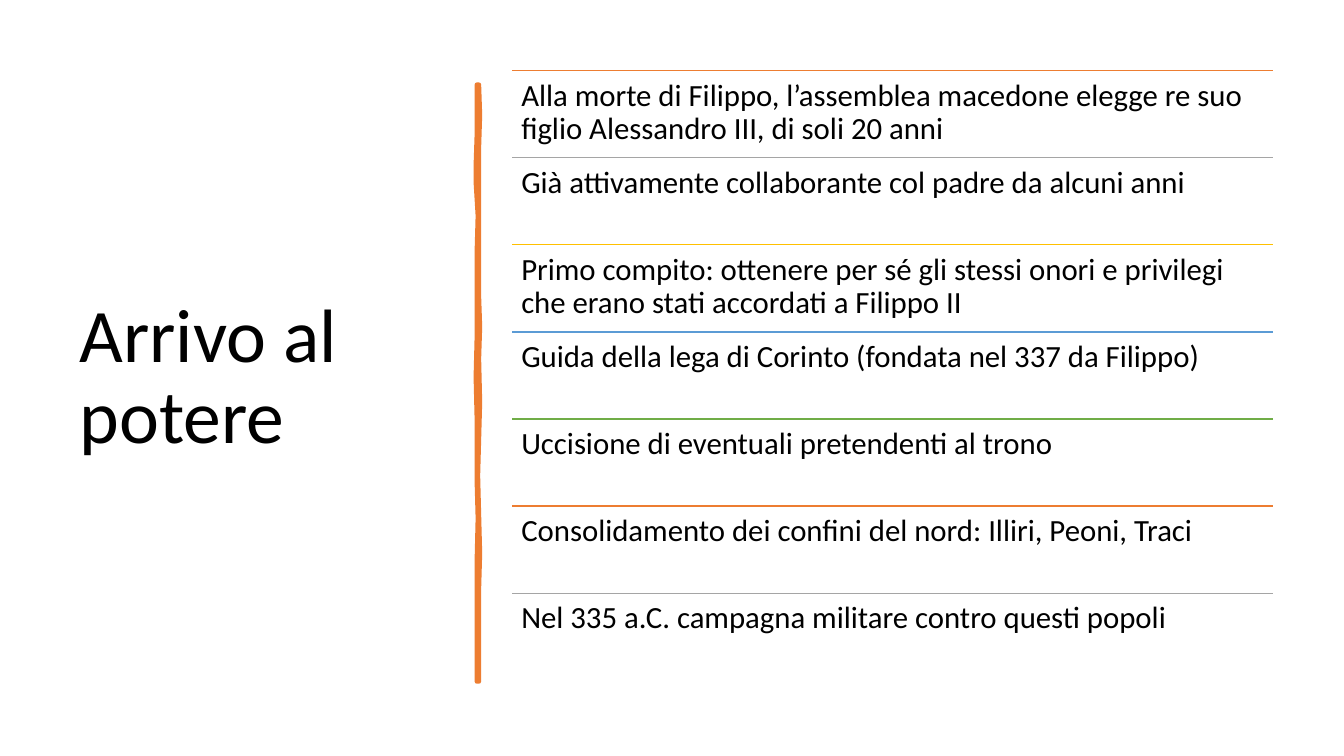
from dataclasses import dataclass

from lxml.etree import SubElement
from pptx import Presentation
from pptx.dml.color import RGBColor
from pptx.enum.shapes import MSO_CONNECTOR
from pptx.enum.text import MSO_ANCHOR
from pptx.oxml.ns import qn
from pptx.util import Inches, Pt


@dataclass(frozen=True)
class Theme:
    font: str = "Calibri"
    text: str = "000000"
    accent: str = "ED7D31"
    rules: tuple = ("ED7D31", "A5A5A5", "FFC000", "5B9BD5", "70AD47")
    title_size: float = 54
    item_size: float = 22
    rule_width: float = 1
    brush_width: float = 3.25


THEME = Theme()
TITLE = "Arrivo al potere"
ITEMS = [
    "Alla morte di Filippo, l’assemblea macedone elegge re suo figlio Alessandro III, di soli 20 anni",
    "Già attivamente collaborante col padre da alcuni anni",
    "Primo compito: ottenere per sé gli stessi onori e privilegi che erano stati accordati a Filippo II",
    "Guida della lega di Corinto (fondata nel 337 da Filippo)",
    "Uccisione di eventuali pretendenti al trono",
    "Consolidamento dei confini del nord: Illiri, Peoni, Traci",
    "Nel 335 a.C. campagna militare contro questi popoli",
]

# Edges of the brush stroke: (distance from the top, shift from the middle)
RIGHT_EDGE = [(0, .01), (.3, .02), (.62, .01), (.9, .01), (1.42, .01), (1.75, .01),
              (2.1, .01), (2.4, .02), (2.72, .01), (3.15, .02), (3.52, .01),
              (3.88, 0), (4.26, .01), (4.65, .02), (5, .01), (5.4, .01), (5.92, .01)]
LEFT_EDGE = [(5.92, -.01), (5.55, -.01), (5.29, -.01), (4.95, -.01), (4.73, -.01),
             (4.3, 0), (3.93, -.01), (3.6, -.01), (3.31, -.01), (2.9, -.02),
             (2.51, -.01), (2.1, -.01), (1.66, -.01), (1.3, 0), (.97, -.02),
             (.8, -.02), (.5, -.01), (0, -.01)]


def add_text(slide, box, text, size, inset, anchor=MSO_ANCHOR.TOP):
    tf = slide.shapes.add_textbox(*map(Inches, box)).text_frame
    tf.word_wrap = True
    tf.vertical_anchor = anchor
    tf.margin_left = tf.margin_right = Inches(inset)
    tf.margin_top = tf.margin_bottom = Inches(0.09)
    p = tf.paragraphs[0]
    p.line_spacing = 0.9
    r = p.add_run()
    r.text = text
    r.font.name = THEME.font
    r.font.size = Pt(size)
    r.font.color.rgb = RGBColor.from_string(THEME.text)


def add_brush_divider(slide, middle, top):
    """Draw the wavy vertical stroke around the line x = middle."""
    points = [(Inches(middle + shift), Inches(top + down))
              for down, shift in RIGHT_EDGE + LEFT_EDGE]
    builder = slide.shapes.build_freeform(*points[0])
    builder.add_line_segments(points[1:], close=True)
    sp = builder.convert_to_shape()
    sp.shadow.inherit = False
    sp.fill.solid()
    sp.fill.fore_color.rgb = RGBColor.from_string(THEME.accent)
    sp.line.color.rgb = RGBColor.from_string(THEME.accent)
    sp.line.width = Pt(THEME.brush_width)
    SubElement(sp.line._get_or_add_ln(), qn("a:round"))


def add_rule(slide, left, top, width, color):
    line = slide.shapes.add_connector(
        MSO_CONNECTOR.STRAIGHT, Inches(left), Inches(top), Inches(left + width), Inches(top))
    line.line.color.rgb = RGBColor.from_string(color)
    line.line.width = Pt(THEME.rule_width)
    SubElement(line._element.spPr, qn("a:effectLst"))


def add_ruled_list(slide, box, items):
    """Split the box into equal rows, each with a coloured rule on top."""
    left, top, width, height = box
    row = height / len(items)
    for i, item in enumerate(items):
        y = top + i * row
        add_rule(slide, left, y, width, THEME.rules[i % len(THEME.rules)])
        add_text(slide, (left, y, width, row), item, THEME.item_size, 0.09)


def main():
    prs = Presentation()
    prs.slide_width, prs.slide_height = Inches(13.33), Inches(7.5)
    slide = prs.slides.add_slide(prs.slide_layouts[6])
    add_text(slide, (0.69, 0.7, 3.74, 6.11), TITLE, THEME.title_size, 0.1, MSO_ANCHOR.MIDDLE)
    add_brush_divider(slide, 4.74, 0.84)
    add_ruled_list(slide, (5.08, 0.7, 7.55, 6.05), ITEMS)
    prs.save("out.pptx")


if __name__ == "__main__":
    main()
